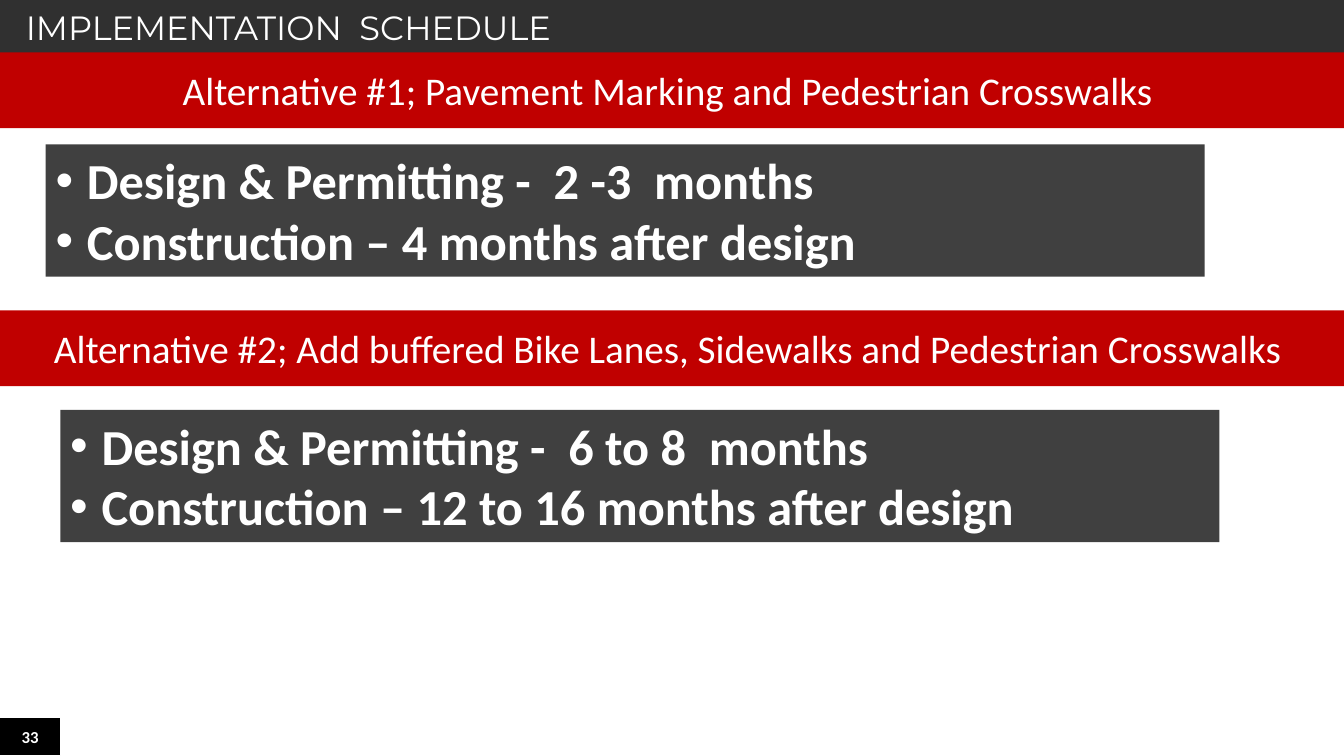
from dataclasses import dataclass

from lxml.etree import SubElement
from pptx import Presentation
from pptx.dml.color import RGBColor
from pptx.enum.shapes import MSO_SHAPE
from pptx.enum.text import MSO_ANCHOR, MSO_AUTO_SIZE, PP_ALIGN
from pptx.oxml.ns import qn
from pptx.util import Cm, Pt

TITLE = "IMPLEMENTATION  SCHEDULE"
PAGE_NUMBER = "33"
ALTERNATIVES = [
    {
        "heading": "Alternative #1; Pavement Marking and Pedestrian Crosswalks",
        "steps": ["Design & Permitting -  2 -3  months", "Construction – 4 months after design"],
        "heading_top": 1.32,
        "steps_left": 1.15,
        "steps_top": 3.64,
    },
    {
        "heading": "Alternative #2; Add buffered Bike Lanes, Sidewalks and Pedestrian Crosswalks",
        "steps": ["Design & Permitting -  6 to 8  months", "Construction – 12 to 16 months after design"],
        "heading_top": 7.82,
        "steps_left": 1.52,
        "steps_top": 10.33,
    },
]

SLIDE_WIDTH, SLIDE_HEIGHT = 33.87, 19.05
TITLE_HEIGHT = 1.34
HEADING_HEIGHT = 1.91
STEPS_WIDTH, STEPS_HEIGHT = 29.21, 3.33
NUMBER_WIDTH, NUMBER_HEIGHT = 1.52, 0.96
BULLET_INDENT = 0.79


@dataclass(frozen=True)
class Theme:
    white: str = "FFFFFF"
    black: str = "000000"
    title_bar: str = "303030"
    heading_bar: str = "C00000"
    steps_box: str = "404040"
    title_font: str = "Montserrat"
    body_font: str = "Calibri"
    title_size: int = 24
    heading_size: int = 28
    steps_size: int = 36
    number_size: int = 12


THEME = Theme()


def add_bullet(paragraph):
    properties = paragraph._p.get_or_add_pPr()
    properties.set("marL", str(Cm(BULLET_INDENT)))
    properties.set("indent", str(-Cm(BULLET_INDENT)))
    SubElement(properties, qn("a:buFont"), typeface="Arial")
    SubElement(properties, qn("a:buChar"), char="•")


def write_text(shape, lines, size, font=THEME.body_font, bold=False, align=PP_ALIGN.LEFT,
               anchor=MSO_ANCHOR.MIDDLE, left_inset=0.25, right_inset=0.25, bullets=False):
    frame = shape.text_frame
    frame.word_wrap = True
    frame.auto_size = MSO_AUTO_SIZE.NONE
    frame.vertical_anchor = anchor
    frame.margin_left, frame.margin_right = Cm(left_inset), Cm(right_inset)
    frame.margin_top = frame.margin_bottom = Cm(0.13)
    frame.text = "\n".join(lines)
    for paragraph in frame.paragraphs:
        paragraph.alignment = align
        if bullets:
            add_bullet(paragraph)
        for run in paragraph.runs:
            run.font.name = font
            run.font.size = Pt(size)
            run.font.bold = bold
            run.font.color.rgb = RGBColor.from_string(THEME.white)


def paint(shape, color):
    shape.fill.solid()
    shape.fill.fore_color.rgb = RGBColor.from_string(color)
    shape.line.fill.background()


def add_box(slide, left, top, width, height, color):
    box = slide.shapes.add_shape(MSO_SHAPE.RECTANGLE, Cm(left), Cm(top), Cm(width), Cm(height))
    box.shadow.inherit = False
    paint(box, color)
    return box


def add_title(slide):
    title = slide.shapes.title
    title.left, title.top = Cm(0), Cm(0)
    title.width, title.height = Cm(SLIDE_WIDTH), Cm(TITLE_HEIGHT)
    paint(title, THEME.title_bar)
    write_text(title, [TITLE], THEME.title_size, font=THEME.title_font, left_inset=0.65)


def add_alternative(slide, alternative):
    heading = add_box(slide, 0, alternative["heading_top"], SLIDE_WIDTH, HEADING_HEIGHT, THEME.heading_bar)
    write_text(heading, [alternative["heading"]], THEME.heading_size, align=PP_ALIGN.CENTER, right_inset=0.48)
    steps = add_box(slide, alternative["steps_left"], alternative["steps_top"],
                    STEPS_WIDTH, STEPS_HEIGHT, THEME.steps_box)
    write_text(steps, alternative["steps"], THEME.steps_size, bold=True, anchor=MSO_ANCHOR.TOP, bullets=True)


def add_page_number(slide):
    number = add_box(slide, 0, SLIDE_HEIGHT - NUMBER_HEIGHT, NUMBER_WIDTH, NUMBER_HEIGHT, THEME.black)
    number.line.color.rgb = RGBColor.from_string(THEME.white)
    number.line.width = Pt(0.75)
    write_text(number, [PAGE_NUMBER], THEME.number_size, bold=True, align=PP_ALIGN.CENTER)


def main():
    presentation = Presentation()
    presentation.slide_width, presentation.slide_height = Cm(SLIDE_WIDTH), Cm(SLIDE_HEIGHT)
    slide = presentation.slides.add_slide(presentation.slide_layouts[5])
    add_title(slide)
    for alternative in ALTERNATIVES:
        add_alternative(slide, alternative)
    add_page_number(slide)
    presentation.save("out.pptx")


if __name__ == "__main__":
    main()
